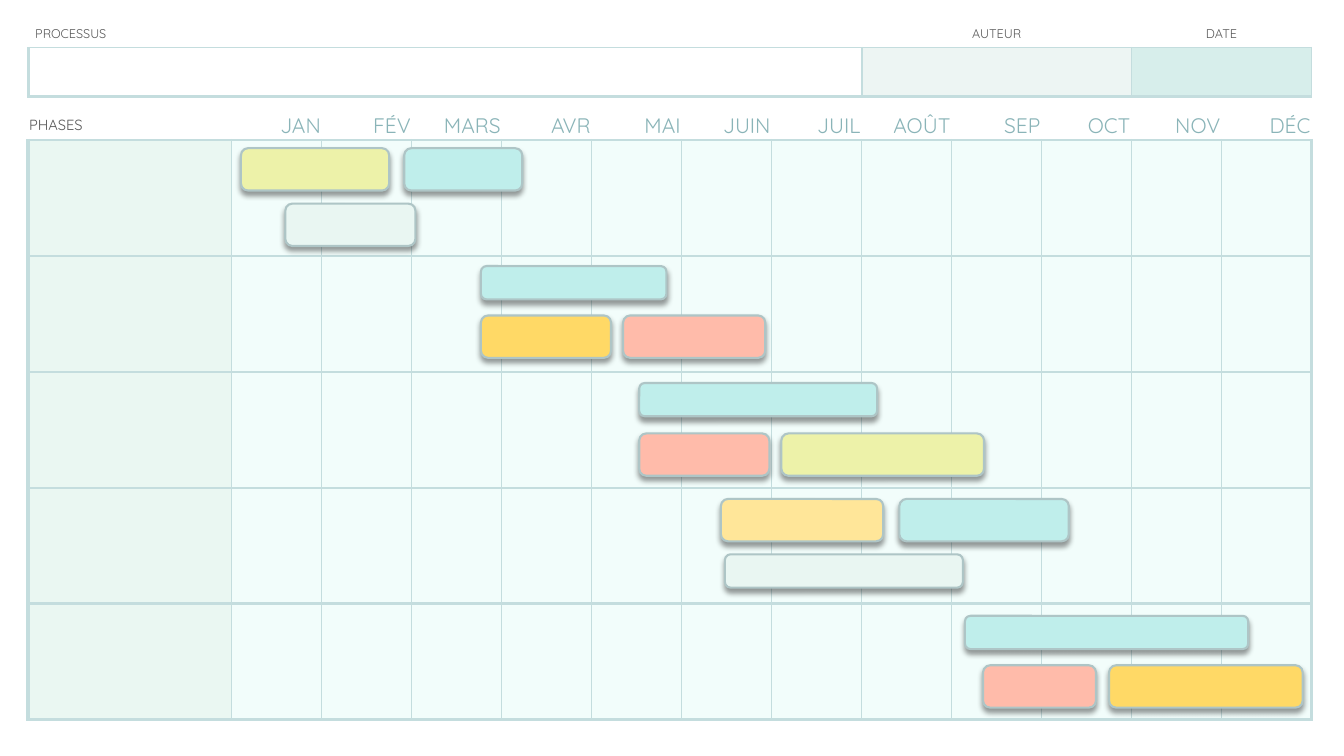
from lxml import etree
from pptx import Presentation
from pptx.dml.color import RGBColor
from pptx.enum.shapes import MSO_SHAPE
from pptx.enum.text import MSO_ANCHOR, PP_ALIGN
from pptx.oxml.ns import qn
from pptx.util import Inches, Pt

ROUND = MSO_SHAPE.ROUNDED_RECTANGLE
MIDDLE = MSO_ANCHOR.MIDDLE
LEFT, CENTER, RIGHT = PP_ALIGN.LEFT, PP_ALIGN.CENTER, PP_ALIGN.RIGHT

FONT = "Quicksand"
WHITE = RGBColor(0xFF, 0xFF, 0xFF)
BLACK = RGBColor(0x00, 0x00, 0x00)
GRID = RGBColor(0xC4, 0xDD, 0xDE)
GRAY = RGBColor(0x59, 0x59, 0x59)
TEAL = RGBColor(0x8A, 0xB4, 0xB8)
MIST = RGBColor(0xED, 0xF5, 0xF3)
MINT = RGBColor(0xD7, 0xEE, 0xEB)
PHASE = RGBColor(0xEA, 0xF7, 0xF2)
MONTH = RGBColor(0xF2, 0xFD, 0xFB)
EDGE = RGBColor(0xAE, 0xC5, 0xC6)
LIME = RGBColor(0xED, 0xF2, 0xA9)
PALE = RGBColor(0xE9, 0xF6, 0xF2)
AQUA = RGBColor(0xBF, 0xEE, 0xEB)
GOLD = RGBColor(0xFF, 0xD9, 0x66)
CORAL = RGBColor(0xFF, 0xBB, 0xAA)
SAND = RGBColor(0xFF, 0xE6, 0x99)

SIDE, WIDTH = 0.28, 12.73
FIRST = 2.02
MONTHS = ["JAN", "FÉV", "MARS", "AVR", "MAI", "JUIN",
          "JUIL", "AOÛT", "SEP", "OCT", "NOV", "DÉC"]
HEADS = [("PROCESSUS", LEFT, WHITE, 8.27), ("AUTEUR", CENTER, MIST, 2.67),
         ("DATE", CENTER, MINT, 1.79)]
PHASES = 5
TALL, THIN = 0.42, 0.33
BARS = [
    (2.39, 1.47, 1.47, TALL, LIME),
    (2.83, 2.02, 1.29, TALL, PALE),
    (4.01, 1.47, 1.17, TALL, AQUA),
    (4.77, 3.13, 1.29, TALL, GOLD),
    (6.18, 3.13, 1.41, TALL, CORAL),
    (4.77, 2.64, 1.84, THIN, AQUA),
    (6.34, 4.3, 1.29, TALL, CORAL),
    (7.75, 4.3, 2.01, TALL, LIME),
    (6.34, 3.8, 2.36, THIN, AQUA),
    (7.15, 4.95, 1.61, TALL, SAND),
    (7.19, 5.5, 2.36, THIN, PALE),
    (8.92, 4.95, 1.68, TALL, AQUA),
    (11, 6.6, 1.92, TALL, GOLD),
    (9.75, 6.6, 1.12, TALL, CORAL),
    (9.57, 6.11, 2.81, THIN, AQUA),
]


def assign(item, values):
    """Set each named value on the item."""
    for name, value in values.items():
        setattr(item, name, value)


def tint(parent, color):
    """Add a colour element and return it."""
    return etree.SubElement(parent, qn("a:srgbClr"), val=str(color))


def border(cell, sides):
    """Draw the cell borders, given as colour and width by side."""
    props = cell._tc.get_or_add_tcPr()
    for side in "LRTB":
        if side in sides:
            color, width = sides[side]
            line = etree.SubElement(props, qn(f"a:ln{side}"), w=str(Pt(width)))
            tint(etree.SubElement(line, qn("a:solidFill")), color)


def paint(cell, color, sides):
    """Give a cell its borders and its fill."""
    border(cell, sides)
    if color is None:
        cell.fill.background()
    else:
        cell.fill.solid()
        cell.fill.fore_color.rgb = color


def label(cell, text, size, color, align, indent=0.01):
    """Write a heading in a cell."""
    edge = Inches(0.01)
    assign(cell, {"vertical_anchor": MIDDLE, "margin_left": Inches(indent),
                  "margin_right": edge, "margin_top": edge, "margin_bottom": 0})
    para = cell.text_frame.paragraphs[0]
    para.alignment = align
    run = para.add_run()
    run.text = text
    assign(run.font, {"name": FONT, "size": Pt(size), "bold": False})
    run.font.color.rgb = color


def grid(slide, top, cols, rows):
    """Add a plain table with the given column widths and row heights."""
    frame = slide.shapes.add_table(
        len(rows), len(cols), Inches(SIDE), Inches(top),
        Inches(WIDTH), Inches(sum(rows)))
    table = frame.table
    assign(table, {"first_row": False, "horz_banding": False})
    for col, width in zip(table.columns, cols):
        col.width = Inches(width)
    for row, height in zip(table.rows, rows):
        row.height = Inches(height)
    return table


def header(slide):
    """Add the table for process, author and date."""
    table = grid(slide, 0.19, [head[3] for head in HEADS], [0.28, 0.49])
    for col, (text, align, color, _) in enumerate(HEADS):
        title, field = table.cell(0, col), table.cell(1, col)
        label(title, text, 9, GRAY, align, 0.01 if col else 0.07)
        paint(title, None, {"B": (GRID, 1)})
        paint(field, color, {"L": (GRID, 1 if col else 2.25), "R": (GRID, 1),
                             "T": (GRID, 1), "B": (GRID, 2.25)})


def calendar(slide):
    """Add the table of phases by month."""
    count = len(MONTHS)
    cols = [FIRST] + [(WIDTH - FIRST) / count] * count
    table = grid(slide, 1.09, cols, [0.3] + [1.15] * PHASES)
    blank = {side: (WHITE, 1) for side in "LRT"}
    for col, text in enumerate(["PHASES"] + MONTHS):
        title = table.cell(0, col)
        look = (15, TEAL, RIGHT) if col else (10.5, GRAY, LEFT)
        label(title, text, *look)
        paint(title, None, {**blank, "B": (GRID, 2.25)})
        for row in range(1, PHASES + 1):
            paint(table.cell(row, col), MONTH if col else PHASE, {
                "L": (GRID, 1 if col else 3),
                "R": (GRID, 2.25 if col == count else 1),
                "T": (GRID, 2.25), "B": (GRID, 2.25)})


def shade(shape):
    """Cast a soft shadow below a shape."""
    shape.shadow.inherit = False
    effects = shape._element.spPr.find(qn("a:effectLst"))
    cast = etree.SubElement(
        effects, qn("a:outerShdw"), blurRad=str(Pt(4)), dist=str(Pt(3)),
        dir="5400000", algn="t", rotWithShape="0")
    etree.SubElement(tint(cast, BLACK), qn("a:alpha"), val="40000")


def bar(slide, left, top, width, height, color):
    """Add one task bar."""
    shape = slide.shapes.add_shape(
        ROUND, Inches(left), Inches(top), Inches(width), Inches(height))
    shape.fill.solid()
    shape.fill.fore_color.rgb = color
    shape.line.color.rgb = EDGE
    shape.line.width = Pt(1.5)
    shade(shape)


def main():
    """Build the yearly planning slide."""
    deck = Presentation()
    assign(deck, {"slide_width": Inches(13.33), "slide_height": Inches(7.5)})
    slide = deck.slides.add_slide(deck.slide_layouts[6])
    header(slide)
    calendar(slide)
    for task in BARS:
        bar(slide, *task)
    deck.save("out.pptx")


if __name__ == "__main__":
    main()
